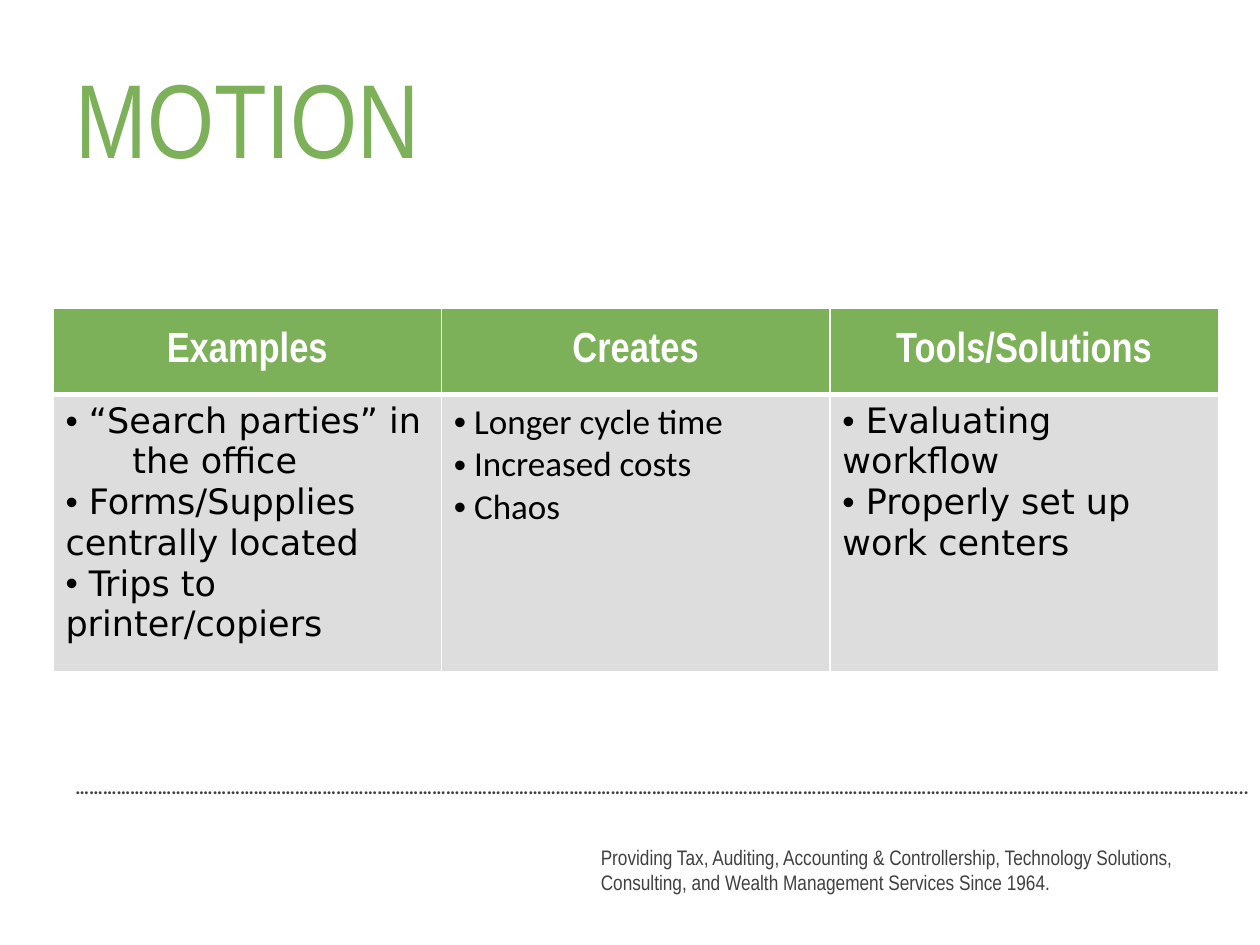
from lxml.etree import SubElement
from pptx import Presentation
from pptx.dml.color import RGBColor
from pptx.enum.text import MSO_ANCHOR as Anchor, PP_ALIGN as Align
from pptx.oxml.ns import qn
from pptx.util import Inches, Pt

WIDTH, HEIGHT = 10, 7.5
GREEN, GRAY, DARK, WHITE, BLACK = "7CB059", "DDDDDD", "404040", "FFFFFF", "000000"
NARROW, SANS, BODY = "Arial Narrow", "DejaVu Sans", "Calibri"

COLUMNS = [
    ("Examples", SANS, ["“Search parties” in\v\tthe office",
                        "Forms/Supplies centrally located",
                        "Trips to printer/copiers"]),
    ("Creates", BODY, ["Longer cycle time", "Increased costs", "Chaos"]),
    ("Tools/Solutions", SANS, ["Evaluating workflow",
                               "Properly set up work centers"]),
]


def color(value):
    return RGBColor.from_string(value)


def add_bullet(para, tab=0.53):
    props = para._p.get_or_add_pPr()
    props.set("marL", "0")
    props.set("indent", "0")
    SubElement(props, qn("a:buFont"), typeface="Arial")
    SubElement(props, qn("a:buChar"), char="•")
    tabs = SubElement(props, qn("a:tabLst"))
    SubElement(tabs, qn("a:tab"), pos=str(Inches(tab)), algn="l")


def write(frame, lines, size, font, ink, bold=False, align=Align.LEFT,
          anchor=Anchor.TOP, bullets=False):
    frame.word_wrap = True
    frame.vertical_anchor = anchor
    for index, line in enumerate(lines):
        para = frame.paragraphs[0] if index == 0 else frame.add_paragraph()
        para.alignment = align
        if bullets:
            add_bullet(para)
        para.text = f" {line}" if bullets else line
        for span in para.runs:
            span.font.size = Pt(size)
            span.font.name = font
            span.font.bold = bold
            span.font.color.rgb = color(ink)


def add_text(page, box, text, **style):
    shape = page.shapes.add_textbox(*map(Inches, box))
    write(shape.text_frame, [text], **style)


def set_borders(cell, widths):
    """Draw white borders, given in points by side."""
    props = cell._tc.get_or_add_tcPr()
    for index, (side, width) in enumerate(widths.items()):
        line = props.makeelement(qn(f"a:ln{side}"), {"w": str(Pt(width))})
        fill = SubElement(line, qn("a:solidFill"))
        SubElement(fill, qn("a:srgbClr"), val=WHITE)
        props.insert(index, line)


def fill_cell(cell, fill, top, bottom, lines, **style):
    cell.fill.solid()
    cell.fill.fore_color.rgb = color(fill)
    set_borders(cell, {"L": 1, "R": 1, "T": top, "B": bottom})
    write(cell.text_frame, lines, **style)
    cell.vertical_anchor = style.get("anchor", Anchor.TOP)


def add_waste_table(page, box, header=0.68):
    left, top, width, height = map(Inches, box)
    table = page.shapes.add_table(2, len(COLUMNS), left, top, width, height).table
    table.rows[0].height = Inches(header)
    table.rows[1].height = height - Inches(header)
    for index, (heading, font, items) in enumerate(COLUMNS):
        table.columns[index].width = width // len(COLUMNS)
        fill_cell(table.cell(0, index), GREEN, 1, 3, [heading], size=24,
                  font=NARROW, ink=WHITE, bold=True, align=Align.CENTER,
                  anchor=Anchor.MIDDLE)
        fill_cell(table.cell(1, index), GRAY, 3, 1, items, size=20, font=font,
                  ink=BLACK, bullets=True)


def add_footer(page, box):
    left, top, width, height = box
    add_text(page, (left, top, width, 0.29), "…" * 83 + "..…..",
             size=11, font=BODY, ink=DARK, bold=True)
    add_text(page, (4.67, top + 0.43, 5.17, height - 0.43),
             "Providing Tax, Auditing, Accounting & Controllership, Technology "
             "Solutions, Consulting, and Wealth Management Services Since 1964.",
             size=12, font=NARROW, ink=DARK, anchor=Anchor.MIDDLE)


def main():
    deck = Presentation()
    deck.slide_width, deck.slide_height = Inches(WIDTH), Inches(HEIGHT)
    page = deck.slides.add_slide(deck.slide_layouts[6])
    margin = WIDTH / 20
    add_footer(page, (margin, 6.1, 9.67, 1.17))
    add_waste_table(page, (0.42, 2.45, 9.25, 2.88))
    add_text(page, (margin, 0.3, WIDTH - 2 * margin, HEIGHT / 6), "MOTION",
             size=60, font=NARROW, ink=GREEN, anchor=Anchor.MIDDLE)
    deck.save("out.pptx")


if __name__ == "__main__":
    main()
